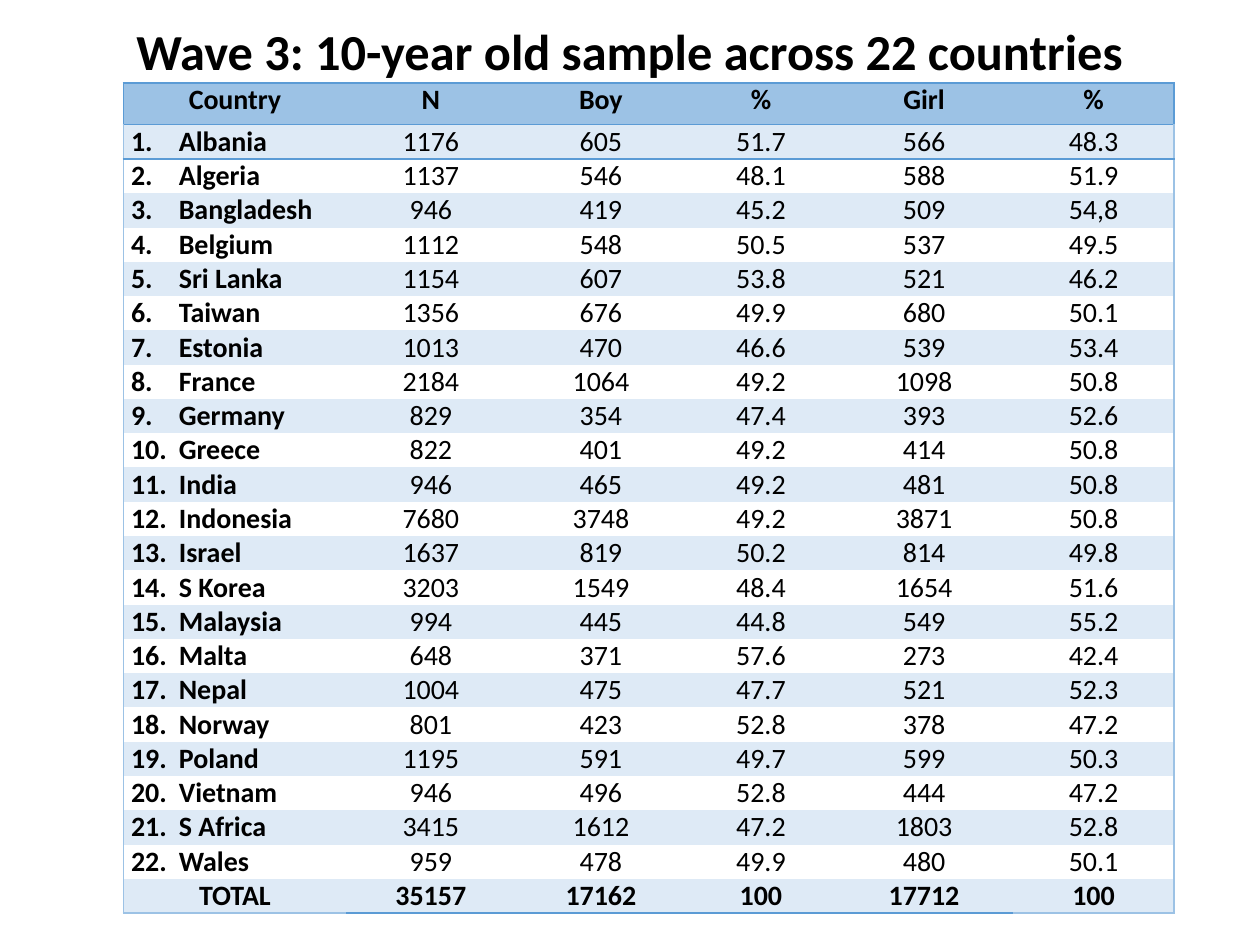
"""Build a one-slide table of the Wave 3 sample by country and gender."""
from lxml.etree import SubElement
from pptx import Presentation
from pptx.dml.color import RGBColor
from pptx.enum.text import MSO_ANCHOR, PP_ALIGN
from pptx.oxml.ns import qn
from pptx.util import Inches, Pt

TITLE = "Wave 3: 10-year old sample across 22 countries"
HEADER = ("Country", "N", "Boy", "%", "Girl", "%")
COUNTRIES = [
    ("Albania", "1176", "605", "51.7", "566", "48.3"),
    ("Algeria", "1137", "546", "48.1", "588", "51.9"),
    ("Bangladesh", "946", "419", "45.2", "509", "54,8"),
    ("Belgium", "1112", "548", "50.5", "537", "49.5"),
    ("Sri Lanka", "1154", "607", "53.8", "521", "46.2"),
    ("Taiwan", "1356", "676", "49.9", "680", "50.1"),
    ("Estonia", "1013", "470", "46.6", "539", "53.4"),
    ("France", "2184", "1064", "49.2", "1098", "50.8"),
    ("Germany", "829", "354", "47.4", "393", "52.6"),
    ("Greece", "822", "401", "49.2", "414", "50.8"),
    ("India", "946", "465", "49.2", "481", "50.8"),
    ("Indonesia", "7680", "3748", "49.2", "3871", "50.8"),
    ("Israel", "1637", "819", "50.2", "814", "49.8"),
    ("S Korea", "3203", "1549", "48.4", "1654", "51.6"),
    ("Malaysia", "994", "445", "44.8", "549", "55.2"),
    ("Malta", "648", "371", "57.6", "273", "42.4"),
    ("Nepal", "1004", "475", "47.7", "521", "52.3"),
    ("Norway", "801", "423", "52.8", "378", "47.2"),
    ("Poland", "1195", "591", "49.7", "599", "50.3"),
    ("Vietnam", "946", "496", "52.8", "444", "47.2"),
    ("S Africa", "3415", "1612", "47.2", "1803", "52.8"),
    ("Wales", "959", "478", "49.9", "480", "50.1"),
]
TOTAL = ("TOTAL", "35157", "17162", "100", "17712", "100")

FONT = "Calibri"
BLACK = RGBColor(0x00, 0x00, 0x00)
HEADER_BLUE = RGBColor(0x9C, 0xC2, 0xE5)
BAND_BLUE = RGBColor(0xDE, 0xEA, 0xF6)
EDGE_BLUE = RGBColor(0x5B, 0x9B, 0xD5)
COLUMN_WIDTHS = (1.77, 1.34, 1.36, 1.18, 1.41, 1.28)
HEADER_HEIGHT, ROW_HEIGHT = 0.33, 0.25
NUMBER_INDENT = Inches(0.38)
NO_GRID_STYLE = "{2D5ABB26-0587-4C30-8999-92F81FD0307C}"


def style_text(paragraph, size, bold):
    for run in paragraph.runs:
        run.font.name = FONT
        run.font.size = Pt(size)
        run.font.bold = bold
        run.font.color.rgb = BLACK


def number_country(paragraph, number):
    properties = paragraph._p.get_or_add_pPr()
    properties.set("marL", str(NUMBER_INDENT))
    properties.set("indent", str(-NUMBER_INDENT))
    SubElement(properties, qn("a:buFont"), typeface="+mj-lt")
    SubElement(properties, qn("a:buAutoNum"), type="arabicPeriod", startAt=str(number))


def cell_edges(row, column, last_row, last_column):
    outer = EDGE_BLUE if row == 0 else HEADER_BLUE
    edges = {}
    if column == 0:
        edges["lnL"] = outer
    if column == last_column:
        edges["lnR"] = outer
    if row <= 1:
        edges["lnT"] = EDGE_BLUE
    if row == 0:
        edges["lnB"] = EDGE_BLUE
    elif row == last_row:
        edges["lnB"] = HEADER_BLUE if column in (0, last_column) else EDGE_BLUE
    return edges


def draw_edges(cell, edges):
    properties = cell._tc.get_or_add_tcPr()
    for side, color in edges.items():
        line = SubElement(properties, qn(f"a:{side}"), w=str(Pt(1)))
        SubElement(SubElement(line, qn("a:solidFill")), qn("a:srgbClr"), val=str(color))


def fill_cell(cell, row, column, value, last_row, last_column):
    cell.margin_left = cell.margin_right = Inches(0.06)
    cell.margin_top = cell.margin_bottom = 0
    draw_edges(cell, cell_edges(row, column, last_row, last_column))
    if row % 2 or row == 0:
        cell.fill.solid()
        cell.fill.fore_color.rgb = BAND_BLUE if row else HEADER_BLUE
    else:
        cell.fill.background()
    cell.text_frame.text = value
    paragraph = cell.text_frame.paragraphs[0]
    is_summary = row in (0, last_row)
    if column == 0 and not is_summary:
        number_country(paragraph, row)
    else:
        paragraph.alignment = PP_ALIGN.CENTER
    style_text(paragraph, 16, is_summary or column == 0)


def add_sample_table(slide):
    sample = [HEADER, *COUNTRIES, TOTAL]
    height = HEADER_HEIGHT + ROW_HEIGHT * (len(sample) - 1)
    table = slide.shapes.add_table(
        len(sample), len(HEADER), Inches(0.98), Inches(0.66),
        Inches(sum(COLUMN_WIDTHS)), Inches(height)).table
    table.first_row = table.horz_banding = False
    table._tbl.tblPr.find(qn("a:tableStyleId")).text = NO_GRID_STYLE
    for column, width in zip(table.columns, COLUMN_WIDTHS):
        column.width = Inches(width)
    for row, values in enumerate(sample):
        table.rows[row].height = Inches(ROW_HEIGHT if row else HEADER_HEIGHT)
        for column, value in enumerate(values):
            fill_cell(table.cell(row, column), row, column, value,
                      len(sample) - 1, len(HEADER) - 1)


def main():
    deck = Presentation()
    deck.slide_width, deck.slide_height = Inches(10), Inches(7.5)
    slide = deck.slides.add_slide(deck.slide_layouts[5])
    title = slide.shapes.title
    title.left, title.top = Inches(0.5), Inches(0.13)
    title.width, title.height = Inches(9), Inches(0.54)
    title.text_frame.text = TITLE
    title.text_frame.vertical_anchor = MSO_ANCHOR.MIDDLE
    heading = title.text_frame.paragraphs[0]
    heading.alignment = PP_ALIGN.CENTER
    style_text(heading, 28.8, True)
    add_sample_table(slide)
    deck.save("out.pptx")


if __name__ == "__main__":
    main()
